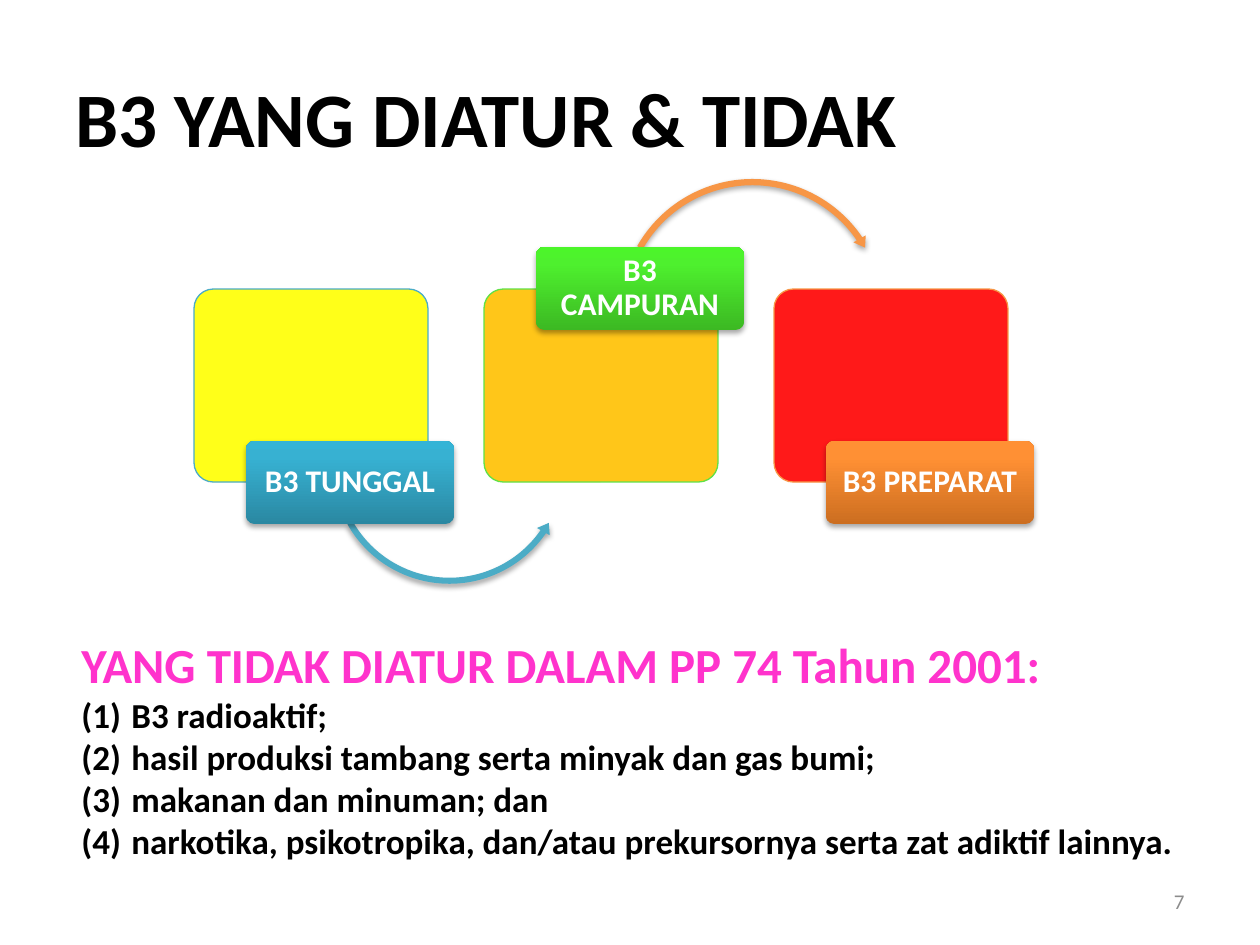
"""Build the slide on which hazardous materials (B3) are regulated and which are not."""
from lxml.etree import SubElement
from pptx import Presentation
from pptx.dml.color import RGBColor
from pptx.enum.shapes import MSO_SHAPE
from pptx.enum.text import MSO_ANCHOR, PP_ALIGN
from pptx.oxml.ns import qn
from pptx.util import Emu, Pt

SCALE = 914400 / 126
FONT = "Calibri"

BLACK = RGBColor(0x00, 0x00, 0x00)
WHITE = RGBColor(0xFF, 0xFF, 0xFF)
GRAY = RGBColor(0x8C, 0x8C, 0x8C)
PINK = RGBColor(0xFF, 0x33, 0xCC)
YELLOW = RGBColor(0xFF, 0xFF, 0x00)
AMBER = RGBColor(0xFF, 0xC0, 0x00)
RED = RGBColor(0xFF, 0x00, 0x00)
TEAL = RGBColor(0x4B, 0xAC, 0xC6)
GREEN = RGBColor(0x60, 0xE1, 0x46)
ORANGE = RGBColor(0xF7, 0x96, 0x46)
TEAL_SHADES = (RGBColor(0x2A, 0x88, 0xA2), RGBColor(0x37, 0xB1, 0xD2), RGBColor(0x34, 0xB4, 0xD6))
GREEN_SHADES = (RGBColor(0x3C, 0xB9, 0x23), RGBColor(0x4E, 0xF0, 0x2E), RGBColor(0x4C, 0xF5, 0x2A))
ORANGE_SHADES = (RGBColor(0xCC, 0x6E, 0x20), RGBColor(0xFF, 0x90, 0x34), RGBColor(0xFF, 0x91, 0x36))

CARD_LEFT, CARD_TOP, CARD_STEP = 194, 289, 290
LABEL_OFFSET, LABEL_LOW, LABEL_HIGH = 52, 441, 247
CARDS = [
    ("B3 TUNGGAL", YELLOW, TEAL, TEAL_SHADES, LABEL_LOW),
    ("B3 CAMPURAN", AMBER, GREEN, GREEN_SHADES, LABEL_HIGH),
    ("B3 PREPARAT", RED, ORANGE, ORANGE_SHADES, LABEL_LOW),
]
ARROWS = [
    (MSO_SHAPE.LEFT_CIRCULAR_ARROW, (328, 345, 243, 243), TEAL,
     (0.025, 3.094, 20.849, 90.245, 0.03)),
    (MSO_SHAPE.CIRCULAR_ARROW, (616, 175, 273, 273), ORANGE,
     (0.023, 2.738, 195.507, 125.755, 0.026)),
]
UNREGULATED = [
    "B3 radioaktif;",
    "hasil produksi tambang serta minyak dan gas bumi;",
    "makanan dan minuman; dan",
    "narkotika, psikotropika, dan/atau prekursornya serta zat adiktif lainnya.",
]


def px(length):
    """Turn pixels into EMU."""
    return Emu(round(length * SCALE))


def style(paragraph, size, color, bold=True):
    """Set the font of a whole paragraph."""
    font = paragraph.font
    font.name, font.size, font.bold = FONT, Pt(size), bold
    font.color.rgb = color


def add_text_frame(slide, box):
    """Add a wrapping, vertically centred text box and return its frame."""
    frame = slide.shapes.add_textbox(*map(px, box)).text_frame
    frame.word_wrap = True
    frame.vertical_anchor = MSO_ANCHOR.MIDDLE
    return frame


def add_line(slide, box, text, size, color, bold=True, align=PP_ALIGN.LEFT):
    """Add a text box with one paragraph."""
    line = add_text_frame(slide, box).paragraphs[0]
    line.text, line.alignment = text, align
    style(line, size, color, bold)


def add_preset(slide, preset, box, adjustments):
    """Add a preset shape without shadow."""
    shape = slide.shapes.add_shape(preset, *map(px, box))
    for index, value in enumerate(adjustments):
        shape.adjustments[index] = value
    shape.shadow.inherit = False
    return shape


def add_alpha(color_element, percent):
    """Make a colour element partly transparent."""
    SubElement(color_element, qn("a:alpha"), val=str(percent * 1000))


def drop_shadow(shape):
    """Give a shape a soft shadow below it."""
    effects = shape._element.spPr.find(qn("a:effectLst"))
    shadow = SubElement(effects, qn("a:outerShdw"), blurRad="40000", dist="23000",
                        dir="5400000", rotWithShape="0")
    add_alpha(SubElement(shadow, qn("a:srgbClr"), val=str(BLACK)), 35)


def shade(shape, colors):
    """Fill a shape with a gradient that rises from dark to light."""
    shape.fill.gradient()
    shape.fill.gradient_angle = 90
    stops = shape._element.spPr.find(".//" + qn("a:gsLst"))
    stops.clear()
    for percent, color in zip((0, 80, 100), colors):
        stop = SubElement(stops, qn("a:gs"), pos=str(percent * 1000))
        SubElement(stop, qn("a:srgbClr"), val=str(color))


def add_card(slide, left, color, outline):
    """Add a slightly transparent card."""
    card = add_preset(slide, MSO_SHAPE.ROUNDED_RECTANGLE, (left, CARD_TOP, 234, 193), [0.1])
    card.fill.solid()
    card.fill.fore_color.rgb = color
    add_alpha(card._element.spPr.find(".//" + qn("a:srgbClr")), 90)
    card.line.color.rgb = outline
    card.line.width = Pt(0.75)


def add_label(slide, left, top, text, shades):
    """Add the shaded label of a card."""
    label = add_preset(slide, MSO_SHAPE.ROUNDED_RECTANGLE, (left, top, 208, 83), [0.1])
    shade(label, shades)
    label.line.fill.background()
    drop_shadow(label)
    frame = label.text_frame
    frame.word_wrap = True
    frame.vertical_anchor = MSO_ANCHOR.MIDDLE
    frame.margin_left = frame.margin_right = px(5)
    frame.margin_top = frame.margin_bottom = px(4)
    name = frame.paragraphs[0]
    name.text, name.alignment, name.line_spacing = text, PP_ALIGN.CENTER, 0.9
    style(name, 18, WHITE)


def add_arrow(slide, preset, box, color, adjustments):
    """Add a curved arrow between two cards."""
    arrow = add_preset(slide, preset, box, adjustments)
    arrow.fill.solid()
    arrow.fill.fore_color.rgb = color
    arrow.line.fill.background()
    drop_shadow(arrow)


def number(paragraph):
    """Number a paragraph as (1), (2) and so on with a hanging indent."""
    properties = paragraph._p.get_or_add_pPr()
    properties.set("marL", str(px(50)))
    properties.set("indent", str(px(-50)))
    bullet_color = SubElement(properties, qn("a:buClr"))
    SubElement(bullet_color, qn("a:srgbClr"), val=str(BLACK))
    SubElement(properties, qn("a:buFont"), typeface="+mj-lt")
    SubElement(properties, qn("a:buAutoNum"), type="arabicParenBoth")


def add_exceptions(slide, box, heading, items):
    """Add a heading and its numbered list."""
    frame = add_text_frame(slide, box)
    title = frame.paragraphs[0]
    title.text = heading
    style(title, 28, PINK)
    for item in items:
        entry = frame.add_paragraph()
        entry.text = item
        number(entry)
        style(entry, 20, BLACK)


def main():
    """Build and save the slide."""
    deck = Presentation()
    deck.slide_width, deck.slide_height = px(1260), px(945)
    slide = deck.slides.add_slide(deck.slide_layouts[6])
    add_line(slide, (63, 38, 1134, 158), "B3 YANG DIATUR & TIDAK", 44, BLACK)
    add_line(slide, (903, 876, 294, 50), "7", 12, GRAY, False, PP_ALIGN.RIGHT)
    add_exceptions(slide, (69, 627, 1155, 242),
                   "YANG TIDAK DIATUR DALAM PP 74 Tahun 2001:", UNREGULATED)
    lefts = [CARD_LEFT + CARD_STEP * column for column in range(len(CARDS))]
    for left, (_, color, outline, _, _) in zip(lefts, CARDS):
        add_card(slide, left, color, outline)
    for arrow in ARROWS:
        add_arrow(slide, *arrow)
    for left, (text, _, _, shades, top) in zip(lefts, CARDS):
        add_label(slide, left + LABEL_OFFSET, top, text, shades)
    deck.save("out.pptx")


if __name__ == "__main__":
    main()
